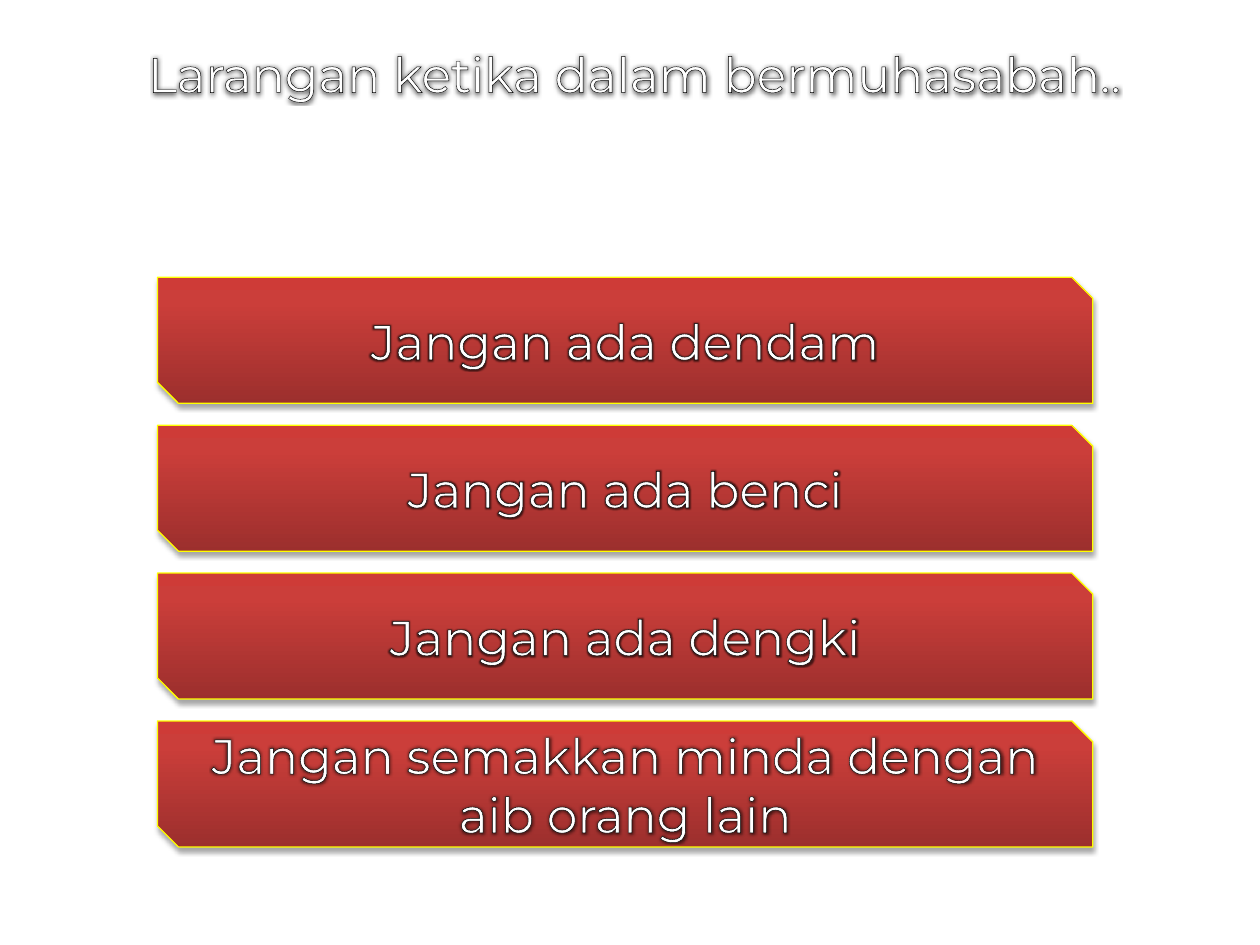
from copy import deepcopy

from lxml.etree import SubElement
from pptx import Presentation
from pptx.dml.color import RGBColor
from pptx.enum.shapes import MSO_SHAPE
from pptx.enum.text import MSO_ANCHOR, PP_ALIGN
from pptx.oxml.ns import qn
from pptx.util import Pt

WHITE = RGBColor(0xFF, 0xFF, 0xFF)
BLACK = RGBColor(0x00, 0x00, 0x00)
YELLOW = RGBColor(0xFF, 0xFF, 0x00)
RED_STOPS = [
    (0, RGBColor(0x9C, 0x2F, 0x2D)),
    (0.8, RGBColor(0xCB, 0x3E, 0x3A)),
    (1, RGBColor(0xCE, 0x3B, 0x37)),
]

HEADING = "Larangan ketika dalam bermuhasabah.."
PROHIBITIONS = [
    "Jangan ada dendam",
    "Jangan ada benci",
    "Jangan ada dengki",
    "Jangan semakkan minda dengan aib orang lain",
]


def add_black(parent, alpha):
    color = SubElement(parent, qn("a:srgbClr"), val=str(BLACK))
    SubElement(color, qn("a:alpha"), val=str(alpha * 1000))


def write_outlined(shape, text):
    """Centre white text with a thin black outline and a soft dark glow."""
    frame = shape.text_frame
    frame.word_wrap = True
    frame.vertical_anchor = MSO_ANCHOR.MIDDLE
    paragraph = frame.paragraphs[0]
    paragraph.alignment = PP_ALIGN.CENTER
    run = paragraph.add_run()
    run.text = text
    paragraph.font.name = "Montserrat"
    paragraph.font.size = Pt(28)
    paragraph.font.color.rgb = WHITE

    properties = run._r.get_or_add_rPr()
    outline = SubElement(properties, qn("a:ln"), w=str(Pt(0.75)))
    add_black(SubElement(outline, qn("a:solidFill")), 100)
    effects = SubElement(properties, qn("a:effectLst"))
    add_black(SubElement(effects, qn("a:glow"), rad=str(Pt(3.6))), 60)


def fill_red_gradient(shape):
    fill = shape.fill
    fill.gradient()
    fill.gradient_angle = 90
    stop_list = shape._element.spPr.find(".//" + qn("a:gsLst"))
    stop_list.append(deepcopy(stop_list[-1]))
    for stop, (position, color) in zip(fill.gradient_stops, RED_STOPS):
        stop.position = position
        stop.color.rgb = color


def add_drop_shadow(shape):
    effects = SubElement(shape._element.spPr, qn("a:effectLst"))
    shadow = SubElement(effects, qn("a:outerShdw"), blurRad=str(Pt(3.1)),
                        dist=str(Pt(1.8)), dir="5400000", rotWithShape="0")
    add_black(shadow, 35)


def place_heading(slide, left, top, width, height):
    title = slide.shapes.title
    title.left, title.top = Pt(left), Pt(top)
    title.width, title.height = Pt(width), Pt(height)
    write_outlined(title, HEADING)


def add_prohibitions(slide, left, top, width, height, gap=12.5):
    """Stack one snipped banner per prohibition, evenly, in the given box."""
    count = len(PROHIBITIONS)
    banner_height = (height - gap * (count - 1)) / count
    for index, prohibition in enumerate(PROHIBITIONS):
        banner = slide.shapes.add_shape(
            MSO_SHAPE.SNIP_2_DIAG_RECTANGLE,
            Pt(left), Pt(top + index * (banner_height + gap)),
            Pt(width), Pt(banner_height))
        fill_red_gradient(banner)
        banner.line.color.rgb = YELLOW
        banner.line.width = Pt(0.75)
        add_drop_shadow(banner)
        write_outlined(banner, prohibition)


def main():
    presentation = Presentation()
    presentation.slide_width, presentation.slide_height = Pt(720), Pt(540)
    slide = presentation.slides.add_slide(presentation.slide_layouts[5])
    slide.background.fill.solid()
    slide.background.fill.fore_color.rgb = WHITE
    place_heading(slide, 22.5, 16.5, 680, 50.5)
    add_prohibitions(slide, 90, 158.5, 534.5, 325.5)
    presentation.save("out.pptx")


if __name__ == "__main__":
    main()
